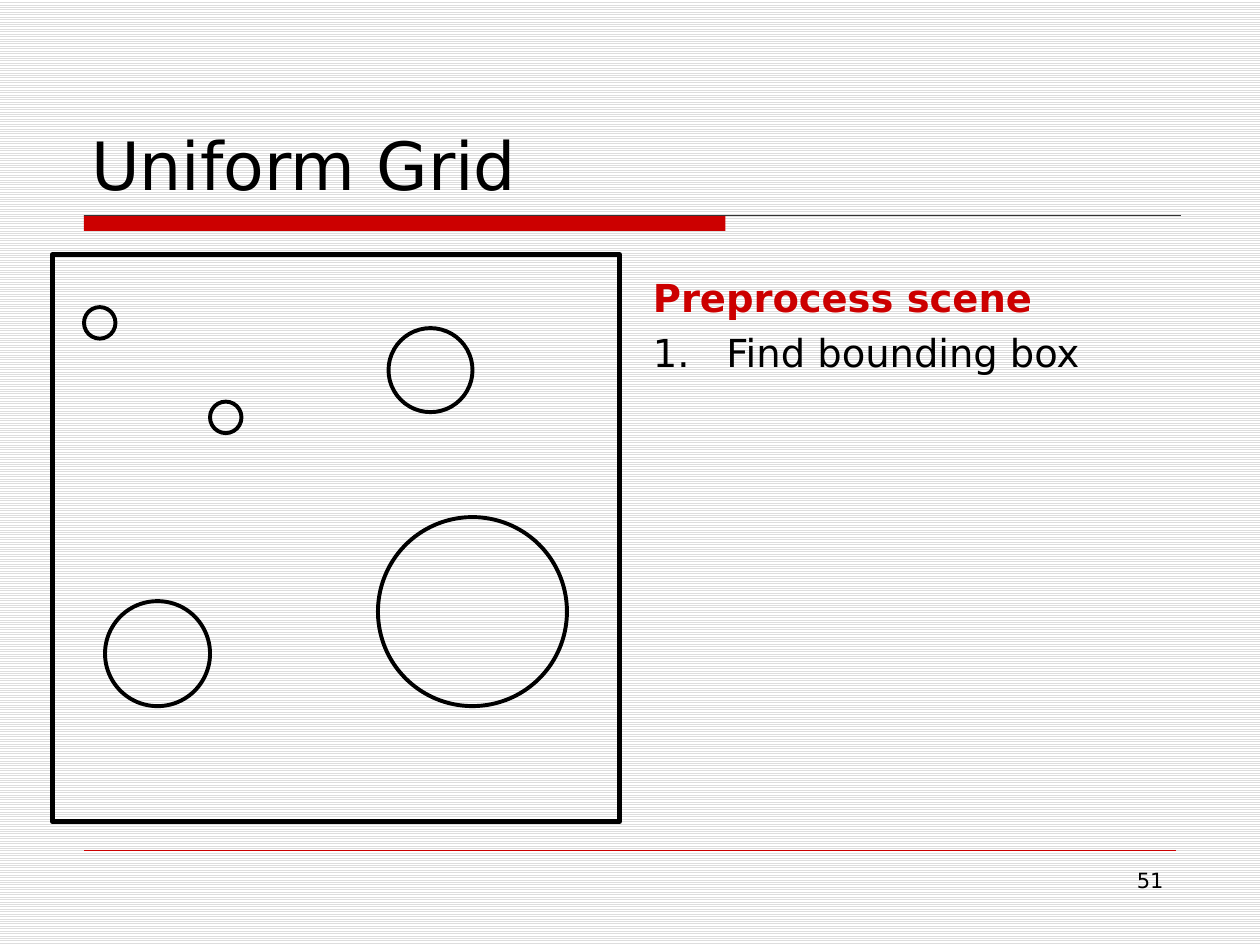
from lxml.etree import SubElement
from pptx import Presentation
from pptx.dml.color import RGBColor
from pptx.enum.dml import MSO_PATTERN
from pptx.enum.shapes import MSO_CONNECTOR, MSO_SHAPE
from pptx.enum.text import MSO_ANCHOR, PP_ALIGN
from pptx.oxml.ns import qn
from pptx.util import Pt

RED, BLACK, DARK = "CC0000", "000000", "333333"


def color(code):
    return RGBColor.from_string(code)


class Deck:
    font = "DejaVu Sans"

    def __init__(self, slide):
        self.slide = slide

    def back(self, fore, rear):
        fill = self.slide.background.fill
        fill.patterned()
        fill.pattern = MSO_PATTERN.LIGHT_HORIZONTAL
        fill.fore_color.rgb = color(fore)
        fill.back_color.rgb = color(rear)

    def shape(self, kind, x, y, w, h, fill=None, line=None, width=0):
        item = self.slide.shapes.add_shape(kind, Pt(x), Pt(y), Pt(w), Pt(h))
        item.shadow.inherit = False
        for part, tint in ((item.fill, fill), (item.line.fill, line)):
            if tint:
                part.solid()
                part.fore_color.rgb = color(tint)
            else:
                part.background()
        if line:
            item.line.width = Pt(width)

    def rule(self, x, y, end, tint, width):
        item = self.slide.shapes.add_connector(
            MSO_CONNECTOR.STRAIGHT, Pt(x), Pt(y), Pt(end), Pt(y))
        item.line.color.rgb = color(tint)
        item.line.width = Pt(width)
        SubElement(item._element.spPr, qn("a:effectLst"))

    def box(self, x, y, w, h, anchor=MSO_ANCHOR.TOP):
        item = self.slide.shapes.add_textbox(Pt(x), Pt(y), Pt(w), Pt(h))
        frame = item.text_frame
        frame.word_wrap = True
        frame.vertical_anchor = anchor
        return frame

    def label(self, para, text, size, tint=BLACK, bold=False, align=PP_ALIGN.LEFT):
        para.text = text
        para.alignment = align
        font = para.font
        font.name, font.size, font.bold = self.font, Pt(size), bold
        font.color.rgb = color(tint)

    def number(self, para, indent):
        props = para._p.get_or_add_pPr()
        props.set("marL", str(Pt(indent)))
        props.set("indent", str(-Pt(indent)))
        SubElement(props, qn("a:buAutoNum"), type="arabicPeriod")


def main():
    prs = Presentation()
    prs.slide_width, prs.slide_height = Pt(720), Pt(540)
    deck = Deck(prs.slides.add_slide(prs.slide_layouts[6]))
    deck.back("DDDDDD", "FFFFFF")

    deck.shape(MSO_SHAPE.RECTANGLE, 48, 123, 366.5, 9, fill=RED)
    deck.rule(48, 123, 675, DARK, 0.75)
    deck.rule(48, 486, 672, RED, 0.25)

    deck.shape(MSO_SHAPE.RECTANGLE, 30, 145.5, 324, 324, line=BLACK, width=3)
    balls = [(48, 175.5, 18), (120, 229.5, 18), (222, 187.5, 48),
             (60, 343.5, 60), (216, 295.5, 108)]
    for x, y, size in balls:
        deck.shape(MSO_SHAPE.OVAL, x, y, size, size, line=BLACK, width=2.25)

    body = deck.box(366, 153, 347, 356)
    deck.label(body.paragraphs[0], "Preprocess scene", 22, RED, True)
    step = body.add_paragraph()
    deck.number(step, 42)
    step.space_before = Pt(5)
    deck.label(step, "Find bounding box", 22)

    title = deck.box(45, 24, 630, 96, MSO_ANCHOR.BOTTOM)
    deck.label(title.paragraphs[0], "Uniform Grid", 38)
    page = deck.box(516, 492, 156, 37.5)
    deck.label(page.paragraphs[0], "51", 12, align=PP_ALIGN.RIGHT)

    prs.save("out.pptx")


if __name__ == "__main__":
    main()
